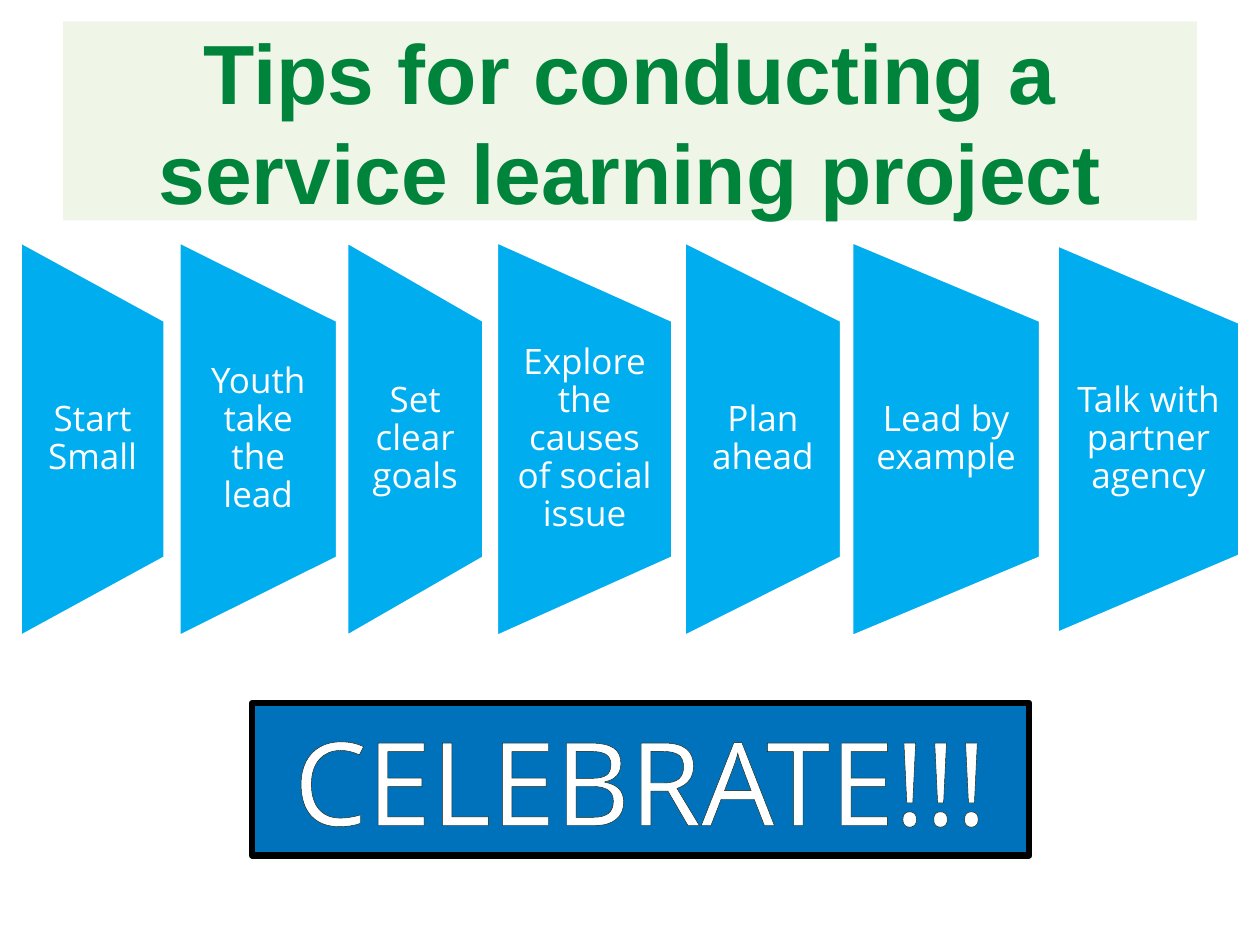
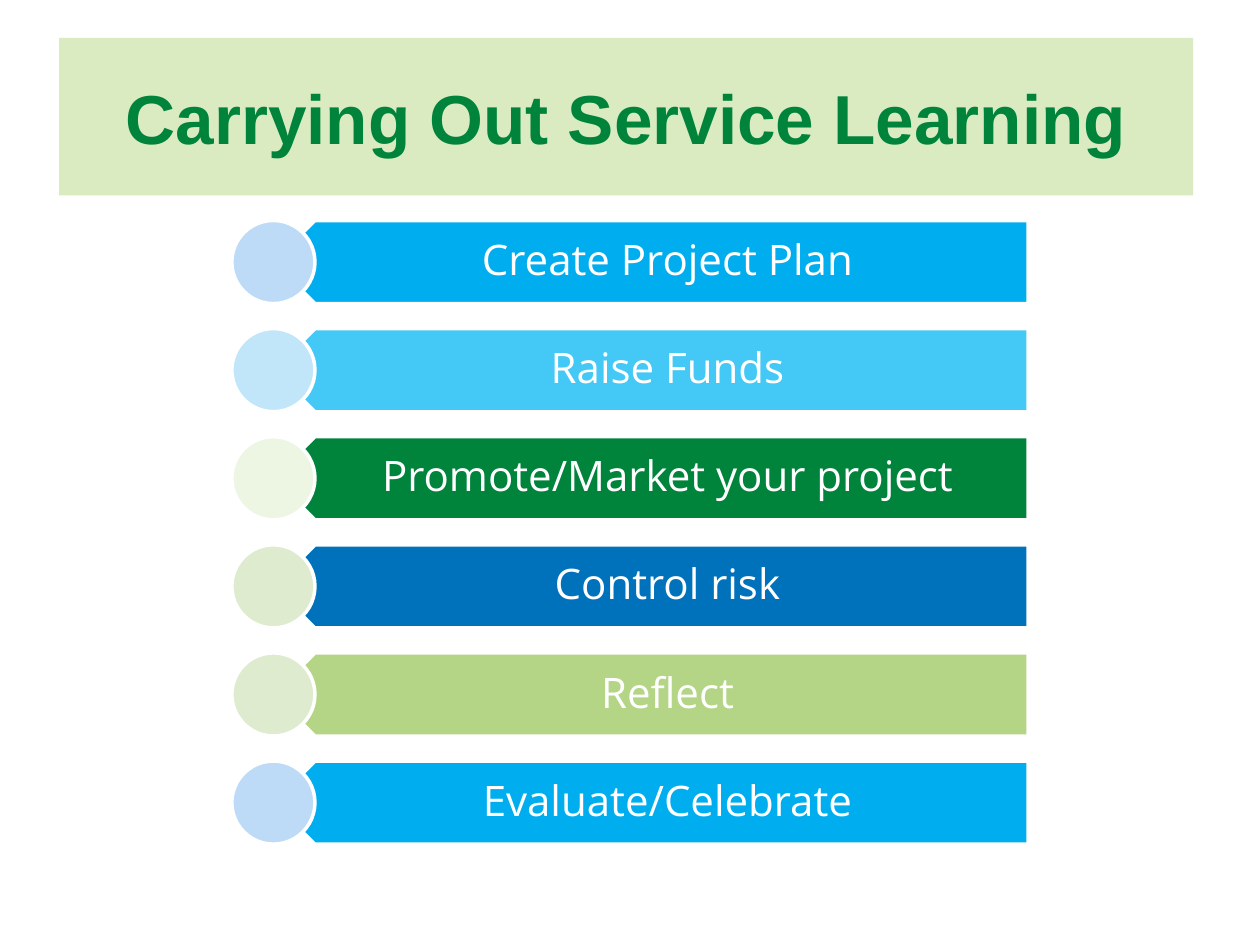
from lxml.etree import SubElement
from pptx import Presentation
from pptx.dml.color import RGBColor
from pptx.enum.shapes import MSO_SHAPE
from pptx.enum.text import MSO_ANCHOR, MSO_AUTO_SIZE, PP_ALIGN
from pptx.oxml.ns import qn
from pptx.util import Inches, Pt

COLORS = {
    "white": "FFFFFF", "black": "000000", "outline": "17200A",
    "sky": "00AEEF", "light_sky": "44C8F5", "green": "00833B",
    "blue": "0072BC", "lime": "B4D486",
    "pale_band": "F0F6E7", "lime_band": "DAEBC1",
    "pale_blue": "BDDBF7", "pale_sky": "C1E6FA",
    "pale_green": "EDF5E3", "pale_lime": "DEEBCE",
}
TITLE_FONT, BODY_FONT = "Arial", "Open Sans"

TIPS_TITLE = "Tips for conducting a service learning project"
TIPS = [
    ("Start Small", 0.16, 1.15, 3.14),
    ("Youth take the lead", 1.42, 1.26, 3.14),
    ("Set clear goals", 2.75, 1.09, 3.14),
    ("Explore the causes of social issue", 3.94, 1.4, 3.14),
    ("Plan ahead", 5.43, 1.25, 3.14),
    ("Lead by example", 6.76, 1.5, 3.14),
    ("Talk with partner agency", 8.39, 1.45, 3.09),
]
TIPS_MIDDLE = 3.485
FINALE = "CELEBRATE!!!"

STAGES_TITLE = "Carrying Out Service Learning"
STAGES = [
    ("Create Project Plan", "sky", "pale_blue"),
    ("Raise Funds", "light_sky", "pale_sky"),
    ("Promote/Market your project", "green", "pale_green"),
    ("Control risk", "blue", "pale_lime"),
    ("Reflect", "lime", "pale_lime"),
    ("Evaluate/Celebrate", "sky", "pale_blue"),
]
STAGE_TOP, STAGE_PITCH, STAGE_SIZE = 1.75, 0.858, 0.66
ARROW_LEFT, ARROW_WIDTH = 2.17, 5.99


def rgb(name):
    return RGBColor.from_string(COLORS[name])


def write(frame, text, size, color, font=BODY_FONT, bold=False, spacing=None):
    frame.text = text
    frame.word_wrap = True
    frame.auto_size = MSO_AUTO_SIZE.NONE
    frame.vertical_anchor = MSO_ANCHOR.MIDDLE
    paragraph = frame.paragraphs[0]
    paragraph.alignment = PP_ALIGN.CENTER
    paragraph.line_spacing = spacing
    run = paragraph.runs[0]
    run.font.name = font
    run.font.size = Pt(size)
    run.font.bold = bold
    run.font.color.rgb = rgb(color)
    return run


def add_titled_slide(deck, text, box, band, size):
    slide = deck.slides.add_slide(deck.slide_layouts[5])
    title = slide.shapes.title
    title.left, title.top, title.width, title.height = map(Inches, box)
    title.fill.solid()
    title.fill.fore_color.rgb = rgb(band)
    write(title.text_frame, text, size, "green", TITLE_FONT, True, Pt(size * 1.2))
    return slide


def add_block(slide, preset, box, fill, line="white", line_width=2, rotation=0):
    block = slide.shapes.add_shape(preset, *map(Inches, box))
    block.shadow.inherit = False
    block.rotation = rotation
    block.fill.solid()
    block.fill.fore_color.rgb = rgb(fill)
    block.line.color.rgb = rgb(line)
    block.line.width = Pt(line_width)
    return block


def add_label(slide, text, box, size, insets):
    frame = slide.shapes.add_textbox(*map(Inches, box)).text_frame
    (frame.margin_left, frame.margin_top,
     frame.margin_right, frame.margin_bottom) = map(Inches, insets)
    write(frame, text, size, "white", spacing=0.9)


def outline_text(run, color, width):
    properties = run.font._element
    line = SubElement(properties, qn("a:ln"), w=str(Pt(width)))
    fill = SubElement(line, qn("a:solidFill"))
    SubElement(fill, qn("a:srgbClr"), val=COLORS[color])
    properties.insert(0, line)


def build_tips(deck):
    slide = add_titled_slide(deck, TIPS_TITLE, (0.5, 0.17, 9, 1.58), "pale_band", 48)
    for tip, left, width, height in TIPS:
        turned_box = (left + (width - height) / 2, TIPS_MIDDLE - width / 2, height, width)
        add_block(slide, MSO_SHAPE.FLOWCHART_MANUAL_OPERATION, turned_box, "sky", rotation=270)
        label_height = height * 0.6
        label_box = (left, TIPS_MIDDLE - label_height / 2, width, label_height)
        add_label(slide, tip, label_box, 20, (0.14, 0, 0.14, 0))
    finale = add_block(slide, MSO_SHAPE.RECTANGLE, (2, 5.58, 6.17, 1.21), "blue", "black", 3.5)
    outline_text(write(finale.text_frame, FINALE, 66, "white"), "outline", 0.75)


def build_stages(deck):
    slide = add_titled_slide(deck, STAGES_TITLE, (0.47, 0.3, 9, 1.25), "lime_band", 39.6)
    half = STAGE_SIZE / 2
    for index, (stage, arrow_color, dot_color) in enumerate(STAGES):
        top = STAGE_TOP + index * STAGE_PITCH
        add_block(slide, MSO_SHAPE.PENTAGON, (ARROW_LEFT, top, ARROW_WIDTH, STAGE_SIZE),
                  arrow_color, rotation=180)
        label_box = (ARROW_LEFT + half / 2, top, ARROW_WIDTH - half / 2, STAGE_SIZE)
        add_label(slide, stage, label_box, 24, (0.29, 0.1, 0.19, 0.1))
        add_block(slide, MSO_SHAPE.OVAL, (ARROW_LEFT - half, top, STAGE_SIZE, STAGE_SIZE), dot_color)


def main():
    deck = Presentation()
    deck.slide_width, deck.slide_height = Inches(10), Inches(7.5)
    build_tips(deck)
    build_stages(deck)
    deck.save("out.pptx")


if __name__ == "__main__":
    main()
